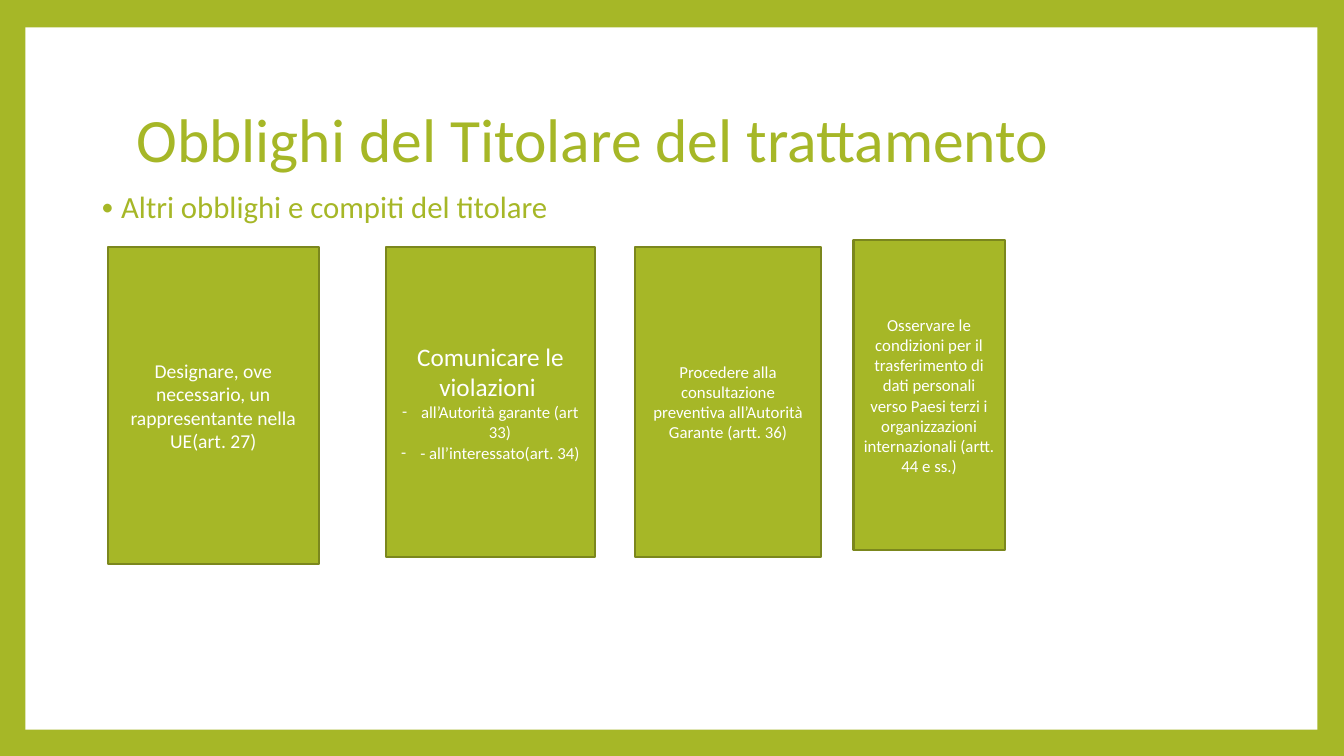
from lxml.etree import SubElement
from pptx import Presentation
from pptx.dml.color import RGBColor
from pptx.enum.shapes import MSO_SHAPE
from pptx.enum.text import MSO_ANCHOR, MSO_AUTO_SIZE, PP_ALIGN
from pptx.oxml.ns import qn
from pptx.util import Cm, Pt

GREEN, DARK, WHITE = "A6B727", "7B871D", "FFFFFF"
TITLE = "Obblighi del Titolare del trattamento"
SUBTITLE = "Altri obblighi e compiti del titolare"
CARDS = [
    ((2.72, 6.22, 5.31, 8), [
        ("Designare, ove necessario, un rappresentante nella UE(art. 27)", 14, None)]),
    ((9.73, 6.22, 5.26, 7.82), [
        ("Comunicare le violazioni ", 18, None),
        ("all’Autorità garante (art 33)", 12, "-"),
        ("- all’interessato(art. 34)", 12, "-")]),
    ((16, 6.22, 4.7, 7.82), [
        ("Procedere alla consultazione preventiva all’Autorità Garante (artt. 36)", 12, None)]),
    ((21.51, 6.05, 3.81, 7.82), [
        ("Osservare le condizioni per il trasferimento di dati personali verso Paesi terzi "
         "i organizzazioni internazionali (artt. 44 e ss.)", 12, None)]),
]


def paint(fmt, color):
    if hasattr(fmt, "solid"):
        fmt.solid()
        fmt = fmt.fore_color
    fmt.rgb = RGBColor.from_string(color)


def place(sp, box):
    sp.left, sp.top, sp.width, sp.height = map(Cm, box)


def add_run(p, text, size, color):
    r = p.add_run()
    r.text = text
    r.font.size = Pt(size)
    r.font.name = "Calibri"
    paint(r.font.color, color)


def add_bullet(p, char, margin, indent, color, size=100):
    pPr = p._p.get_or_add_pPr()
    pPr.set("marL", str(Cm(margin)))
    pPr.set("indent", str(Cm(indent)))
    clr = SubElement(pPr, qn("a:buClr"))
    SubElement(clr, qn("a:srgbClr"), val=color)
    SubElement(pPr, qn("a:buSzPct"), val=str(size * 1000))
    SubElement(pPr, qn("a:buFont"), typeface="Calibri")
    SubElement(pPr, qn("a:buChar"), char=char)


def add_box(s, box, fill):
    sp = s.shapes.add_shape(MSO_SHAPE.RECTANGLE, *map(Cm, box))
    sp.shadow.inherit = False
    paint(sp.fill, fill)
    return sp


def fill_placeholder(sp, box, anchor, text, size):
    place(sp, box)
    tf = sp.text_frame
    tf.word_wrap = True
    tf.auto_size = MSO_AUTO_SIZE.NONE
    tf.vertical_anchor = anchor
    p = tf.paragraphs[0]
    p.alignment = PP_ALIGN.LEFT
    p.line_spacing = 0.9
    add_run(p, text, size, GREEN)
    return p


def add_card(s, box, lines):
    sp = add_box(s, box, GREEN)
    paint(sp.line.fill, DARK)
    sp.line.width = Pt(1.5)
    tf = sp.text_frame
    tf.word_wrap = True
    tf.vertical_anchor = MSO_ANCHOR.MIDDLE
    for i, (text, size, bullet) in enumerate(lines):
        p = tf.add_paragraph() if i else tf.paragraphs[0]
        p.alignment = PP_ALIGN.CENTER
        if bullet:
            add_bullet(p, bullet, 0.48, -0.48, WHITE)
        add_run(p, text, size, WHITE)


def main():
    prs = Presentation()
    prs.slide_width, prs.slide_height = Cm(33.87), Cm(19.05)
    s = prs.slides.add_slide(prs.slide_layouts[1])
    paint(s.background.fill, GREEN)

    panel = add_box(s, (0.64, 0.69, 32.56, 17.7), WHITE)
    panel.line.fill.background()
    s.shapes.element.insert(2, panel.element)

    fill_placeholder(s.shapes.title, (3.18, 1.7, 27.43, 3.76), MSO_ANCHOR.MIDDLE, TITLE, 44)
    p = fill_placeholder(s.placeholders[1], (2.16, 4.72, 28.45, 12.19), MSO_ANCHOR.TOP,
                         SUBTITLE, 22)
    p.space_before = Pt(14)
    add_bullet(p, "•", 0.64, -0.5, GREEN, 80)

    for box, lines in CARDS:
        add_card(s, box, lines)
    prs.save("out.pptx")


if __name__ == "__main__":
    main()
